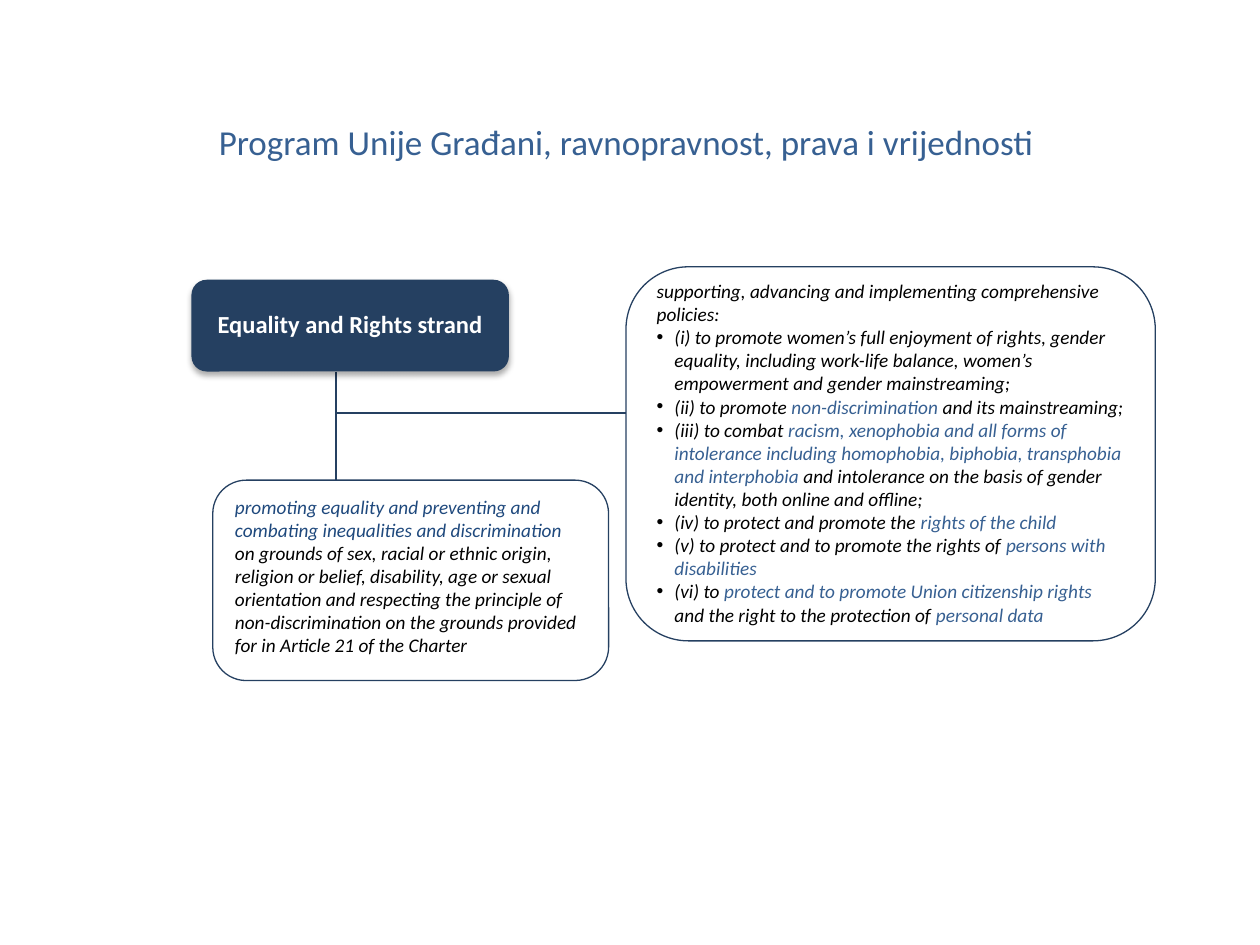
from lxml import etree
from pptx import Presentation
from pptx.dml.color import RGBColor
from pptx.enum.shapes import MSO_CONNECTOR, MSO_SHAPE
from pptx.enum.text import MSO_ANCHOR, PP_ALIGN
from pptx.oxml.ns import qn
from pptx.util import Cm, Pt

ROUNDED = MSO_SHAPE.ROUNDED_RECTANGLE
STRAIGHT = MSO_CONNECTOR.STRAIGHT
MIDDLE = MSO_ANCHOR.MIDDLE
LEFT, CENTER = PP_ALIGN.LEFT, PP_ALIGN.CENTER

NAVY = RGBColor(0x25, 0x40, 0x61)
DARK_BLUE = RGBColor(0x1F, 0x49, 0x7D)
BLUE = RGBColor(0x37, 0x60, 0x92)
BLACK = RGBColor(0, 0, 0)
WHITE = RGBColor(255, 255, 255)

GROUNDS = [[
    ("promoting equality and preventing and combating inequalities and discrimination ", DARK_BLUE),
    ("on grounds of sex, racial or ethnic origin, religion or belief, disability, age or "
     "sexual orientation and respecting the principle of non-discrimination on the grounds "
     "provided for in Article 21 of the Charter", BLACK),
]]
POLICIES = [
    [("supporting, advancing and implementing comprehensive policies:", BLACK)],
    [("(i) to promote women’s full enjoyment of rights, gender equality, including work-life "
      "balance, women’s empowerment and gender mainstreaming;", BLACK)],
    [("(ii) to promote ", BLACK), ("non-discrimination ", BLUE), ("and its mainstreaming;", BLACK)],
    [("(iii) to combat ", BLACK),
     ("racism, xenophobia and all forms of intolerance including homophobia, biphobia, "
      "transphobia and interphobia ", BLUE),
     ("and intolerance on the basis of gender identity, both online and offline;", BLACK)],
    [("(iv) to protect and promote the ", BLACK), ("rights of the child", BLUE)],
    [("(v) to protect and to promote the rights of ", BLACK), ("persons with disabilities", BLUE)],
    [("(vi) to ", BLACK), ("protect and to promote Union citizenship rights ", BLUE),
     ("and the right to the protection of ", BLACK), ("personal data", BLUE)],
]


def set_frame(frame, top, bottom):
    frame.word_wrap = True
    frame.vertical_anchor = MIDDLE
    frame.margin_left = frame.margin_right = Cm(0.25)
    frame.margin_top, frame.margin_bottom = Cm(top), Cm(bottom)


def add_run(paragraph, text, size, color, bold=False, italic=False):
    run = paragraph.add_run()
    run.text = text
    font = run.font
    font.name, font.size = "Calibri", Pt(size)
    font.bold, font.italic = bold, italic
    font.color.rgb = color


prs = Presentation()
prs.slide_width, prs.slide_height = Cm(25.4), Cm(19.05)
slide = prs.slides.add_slide(prs.slide_layouts[6])
shapes = slide.shapes

# Title
title = shapes.add_textbox(Cm(3.25), Cm(2.26), Cm(18.75), Cm(1.3))
set_frame(title.text_frame, 0.1, 0.1)
heading = title.text_frame.paragraphs[0]
heading.alignment = CENTER
heading.line_spacing = 0.9
add_run(heading, "Program Unije Građani, ravnopravnost, prava i vrijednosti", 20, BLUE)

# Lines from the strand to its two aims
for x1, y1, x2, y2 in [(6.78, 7.49, 6.78, 9.68), (6.78, 8.33, 12.62, 8.33)]:
    branch = shapes.add_connector(STRAIGHT, Cm(x1), Cm(y1), Cm(x2), Cm(y2))
    branch.line.color.rgb = NAVY
    branch.line.width = Pt(1)
    etree.SubElement(branch._element.spPr, qn("a:effectLst"))

# Aims: position and size, top and bottom margin, paragraphs
AIMS = [
    ((4.29, 9.68, 7.98, 4.04), (0.53, 0.71), GROUNDS),
    ((12.62, 5.38, 10.67, 7.54), (0.08, 0.13), POLICIES),
]
for place, margins, paragraphs in AIMS:
    aim = shapes.add_shape(ROUNDED, *[Cm(length) for length in place])
    aim.shadow.inherit = False
    aim.fill.background()
    aim.line.color.rgb = NAVY
    aim.line.width = Pt(0.75)
    frame = aim.text_frame
    set_frame(frame, *margins)
    for index, runs in enumerate(paragraphs):
        paragraph = frame.add_paragraph() if index else frame.paragraphs[0]
        paragraph.alignment = LEFT
        for text, color in runs:
            add_run(paragraph, text, 11, color, italic=True)
        if index:
            properties = paragraph._p.get_or_add_pPr()
            properties.set("marL", str(Cm(0.36)))
            properties.set("indent", str(-Cm(0.36)))
            etree.SubElement(properties, qn("a:buFont"), typeface="Arial")
            etree.SubElement(properties, qn("a:buChar"), char="•")

# Strand
strand = shapes.add_shape(ROUNDED, Cm(3.86), Cm(5.64), Cm(6.4), Cm(1.85))
strand.shadow.inherit = False
strand.fill.solid()
strand.fill.fore_color.rgb = NAVY
strand.line.fill.background()
effects = strand._element.spPr.find(qn("a:effectLst"))
shadow = etree.SubElement(effects, qn("a:outerShdw"), blurRad=str(Pt(3.5)),
                          dist=str(Pt(2.2)), dir="5400000", rotWithShape="0")
shadow_color = etree.SubElement(shadow, qn("a:srgbClr"), val="000000")
etree.SubElement(shadow_color, qn("a:alpha"), val="32000")
set_frame(strand.text_frame, 0, 0)
label = strand.text_frame.paragraphs[0]
label.alignment = CENTER
label.line_spacing = 0.9
add_run(label, "Equality and Rights strand", 14, WHITE, bold=True)

prs.save("out.pptx")
